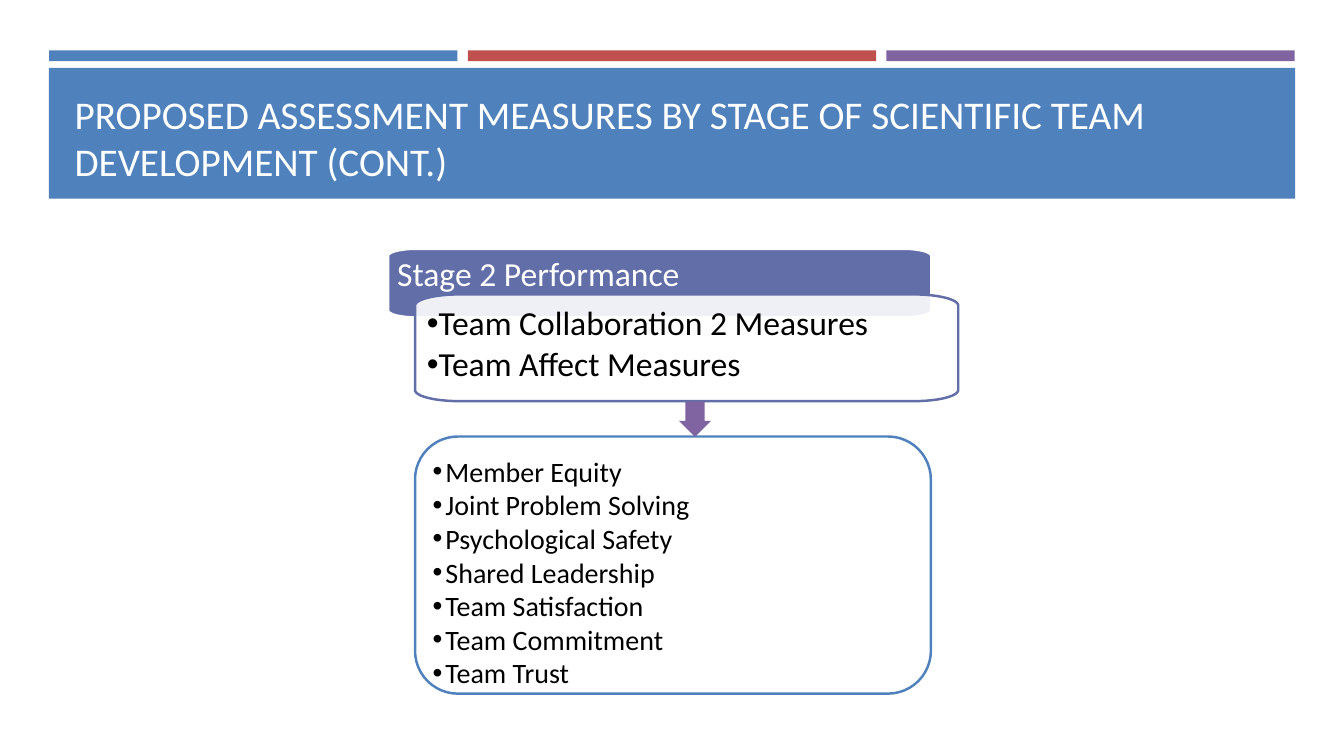
from math import cos, pi, sin

from lxml.etree import SubElement
from pptx import Presentation
from pptx.dml.color import RGBColor
from pptx.enum.shapes import MSO_SHAPE as SHAPE
from pptx.enum.text import MSO_ANCHOR as ANCHOR, MSO_AUTO_SIZE as AUTO, PP_ALIGN as ALIGN
from pptx.oxml.ns import qn
from pptx.util import Cm, Pt

COLORS = {
    "blue": "4F81BD", "red": "C0504D", "purple": "8064A2",
    "indigo": "626EA7", "white": "FFFFFF", "black": "000000",
}
TITLE = ("PROPOSED ASSESSMENT MEASURES BY STAGE OF SCIENTIFIC TEAM "
         "DEVELOPMENT (CONT.)")
MEASURES = ["Team Collaboration 2 Measures", "Team Affect Measures"]
DETAILS = ["Member Equity", "Joint Problem Solving", "Psychological Safety",
           "Shared Leadership", "Team Satisfaction", "Team Commitment", "Team Trust"]


def rgb(name):
    return RGBColor.from_string(COLORS[name])


def set_attrs(obj, values):
    for name, value in values.items():
        setattr(obj, name, value)


class StageSlide:
    font = "Calibri"
    line_width = Pt(1.75)

    def __init__(self, prs):
        self.slide = prs.slides.add_slide(prs.slide_layouts[5])
        self.shapes = self.slide.shapes

    def paint(self, sp, fill, line=None, opacity=None):
        sp.shadow.inherit = False
        sp.fill.solid()
        sp.fill.fore_color.rgb = rgb(fill)
        if opacity:
            color = sp.fill._xPr.find(qn("a:solidFill"))[0]
            SubElement(color, qn("a:alpha"), val=str(opacity * 1000))
        if line:
            sp.line.color.rgb = rgb(line)
            sp.line.width = self.line_width
        else:
            sp.line.fill.background()
        return sp

    def shape(self, kind, box, fill, line=None):
        sp = self.shapes.add_shape(kind, *map(Cm, box))
        return self.paint(sp, fill, line)

    def panel(self, box, radii, fill, line, opacity=None):
        """Draw a rectangle whose corners are quarter ellipses."""
        x, y, w, h = box
        rx, ry = radii
        centres = [(x + w - rx, y + h - ry), (x + rx, y + h - ry),
                   (x + rx, y + ry), (x + w - rx, y + ry)]
        steps = 12
        points = []
        for quarter, (cx, cy) in enumerate(centres):
            for step in range(steps + 1):
                angle = (quarter + step / steps) * pi / 2
                points.append((Cm(cx + rx * cos(angle)), Cm(cy + ry * sin(angle))))
        builder = self.shapes.build_freeform(*points[0])
        builder.add_line_segments(points[1:], close=True)
        return self.paint(builder.convert_to_shape(), fill, line, opacity)

    def text(self, sp, lines, size, color, insets, anchor=ANCHOR.TOP,
             bullet_indent=None, **spacing):
        """Fill a shape; insets run left, top, right, bottom in cm."""
        tf = sp.text_frame
        sides = ("margin_left", "margin_top", "margin_right", "margin_bottom")
        set_attrs(tf, dict(zip(sides, map(Cm, insets))))
        set_attrs(tf, {"word_wrap": True, "auto_size": AUTO.NONE,
                       "vertical_anchor": anchor})
        for i, line in enumerate(lines):
            p = tf.add_paragraph() if i else tf.paragraphs[0]
            set_attrs(p, {"alignment": ALIGN.LEFT, **spacing})
            if bullet_indent:
                self.bullet(p, bullet_indent)
            r = p.add_run()
            r.text = line
            set_attrs(r.font, {"name": self.font, "size": Pt(size)})
            r.font.color.rgb = rgb(color)

    def bullet(self, p, indent):
        pPr = p._p.get_or_add_pPr()
        pPr.set("marL", str(Cm(indent)))
        pPr.set("indent", str(-Cm(indent)))
        SubElement(pPr, qn("a:buFont"), typeface="Arial")
        SubElement(pPr, qn("a:buChar"), char="•")

    def title(self, text, box):
        sp = self.shapes.title
        set_attrs(sp, dict(zip(("left", "top", "width", "height"), map(Cm, box))))
        self.text(sp, [text], 28, "white", (0.25, 0.13, 0.25, 0.13), ANCHOR.BOTTOM)
        self.shapes._spTree.append(sp._element)  # bring in front of the band


def main():
    prs = Presentation()
    set_attrs(prs, {"slide_width": Cm(33.87), "slide_height": Cm(19.05)})
    page = StageSlide(prs)

    for i, color in enumerate(("blue", "red", "purple")):
        page.shape(SHAPE.RECTANGLE, (1.24 + i * 10.55, 1.27, 10.29, 0.27), color)
    page.shape(SHAPE.RECTANGLE, (1.23, 1.71, 31.41, 3.3), "blue")
    page.title(TITLE, (1.63, 1.96, 30.63, 2.82))

    stage = page.panel((9.78, 6.27, 13.69, 1.73), (0.71, 0.18), "indigo", "white")
    page.text(stage, ["Stage 2 Performance"], 24, "white",
              (0.23, 0.23, 0.23, 0.68), line_spacing=0.9)

    measures = page.panel((10.46, 7.42, 13.69, 2.69), (1.12, 0.28),
                          "white", "indigo", opacity=90)
    page.text(measures, MEASURES, 24, "black", (0.3,) * 4, bullet_indent=0.16,
              line_spacing=0.9, space_after=Pt(3.6))

    details = page.shape(SHAPE.ROUNDED_RECTANGLE, (10.46, 11, 13, 6.48),
                         "white", "blue")
    page.text(details, DETAILS, 20, "black", (0.13,) * 4, bullet_indent=0.32)

    arrow = page.shape(SHAPE.RIGHT_ARROW, (17.07, 10.16, 0.89, 0.81), "purple")
    arrow.rotation = 90
    arrow.adjustments[0] = 0.6

    prs.save("out.pptx")


if __name__ == "__main__":
    main()
